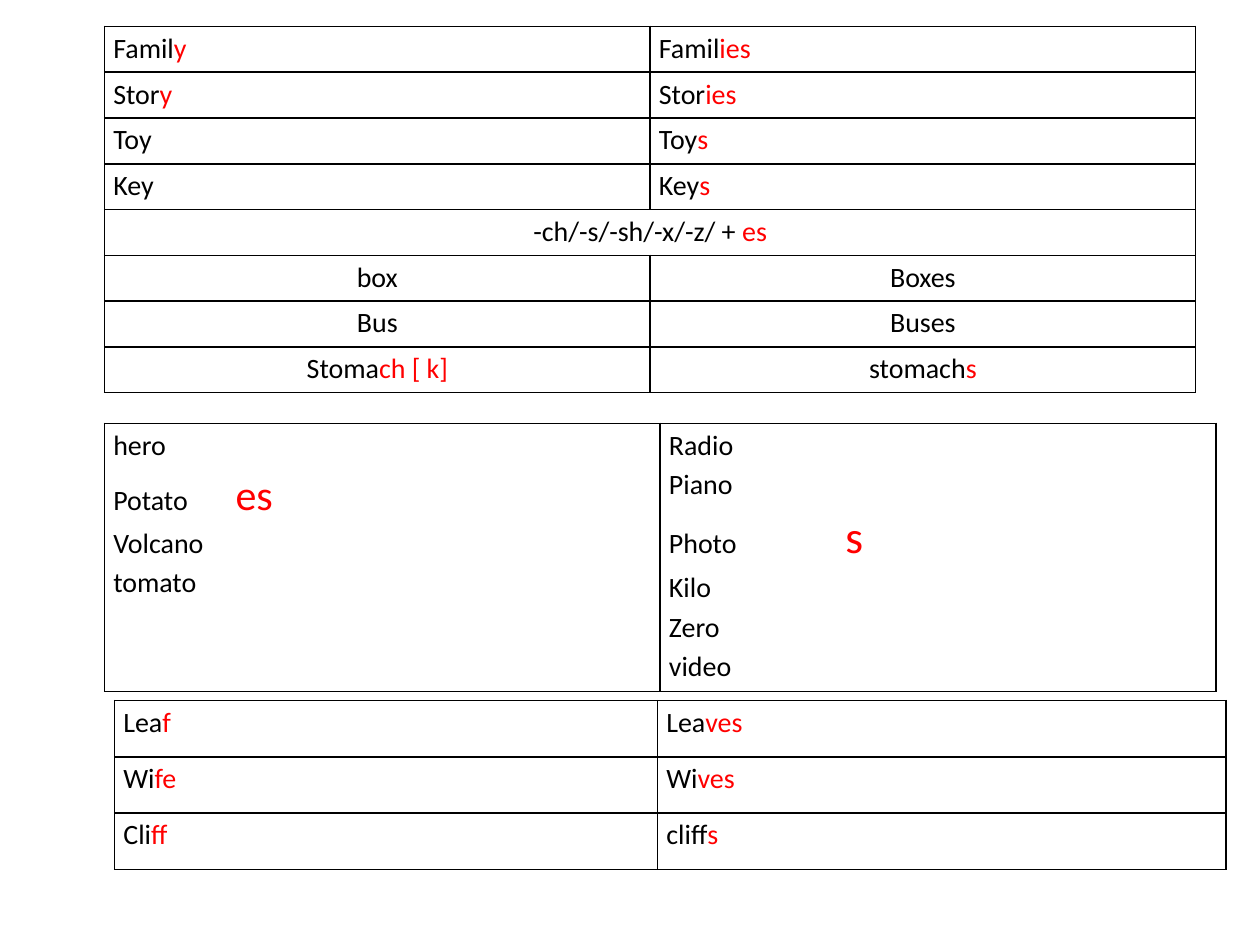
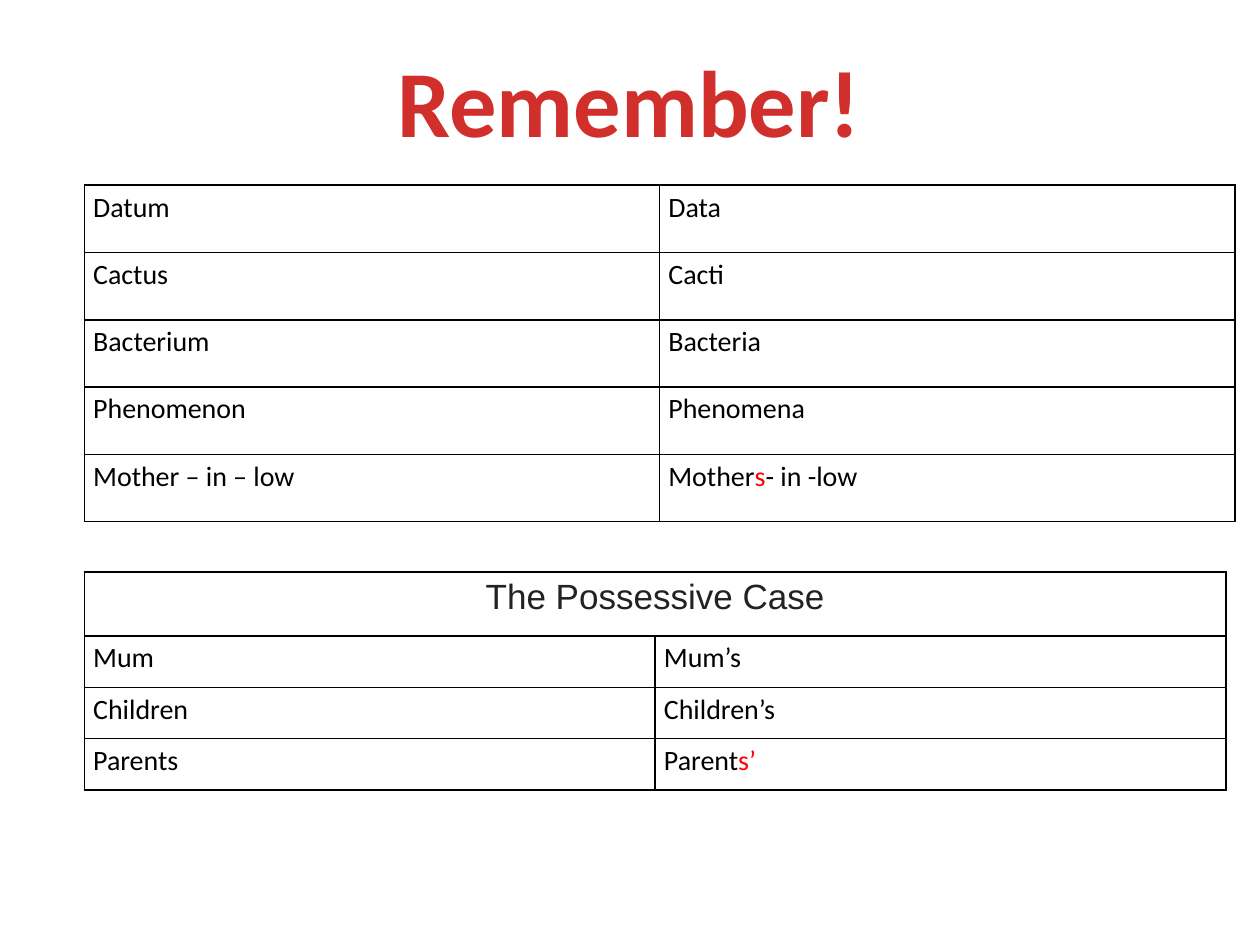
from dataclasses import dataclass
from itertools import accumulate
from typing import NamedTuple

from lxml.etree import SubElement
from pptx import Presentation
from pptx.dml.color import RGBColor
from pptx.enum.text import PP_ALIGN
from pptx.oxml.ns import qn
from pptx.slide import Slide
from pptx.table import _Cell
from pptx.text.text import _Paragraph
from pptx.util import Inches, Pt

SLIDE_WIDTH, SLIDE_HEIGHT = Inches(10), Inches(7.5)
COLUMN, ROW = SLIDE_WIDTH / 100, SLIDE_HEIGHT / 75
ACCENT_MARK = "*"


class TextStyle(NamedTuple):
    font: str
    size: int
    color: str
    bold: bool = False


@dataclass(frozen=True)
class Theme:
    body: TextStyle = TextStyle("Calibri", 16, "000000")
    heading: TextStyle = TextStyle("Arial", 20, "222222")
    title: TextStyle = TextStyle("Calibri", 54, "D02F2C", True)
    accent: str = "FF0000"
    border: str = "000000"
    border_width: int = Pt(1)
    line_spacing: float = 1.15
    side_margin: int = Inches(0.07)


THEME = Theme()


class Box(NamedTuple):
    """Left, top, width and height in grid columns and rows."""
    left: float
    top: float
    width: float
    height: float

    def lengths(self) -> tuple[int, ...]:
        units = (COLUMN, ROW, COLUMN, ROW)
        return tuple(round(share * unit) for share, unit in zip(self, units))


class Line(NamedTuple):
    """Text whose starred parts are accented; tab is a stop in grid columns."""
    text: str
    accent_size: int = THEME.body.size
    tab: float = 0


@dataclass(frozen=True)
class WordRow:
    """A row of cells, each a tuple of lines; a single cell spans the table."""
    cells: tuple[tuple[Line, ...], ...]
    centred: bool = False
    style: TextStyle = THEME.body


@dataclass(frozen=True)
class WordTable:
    box: Box
    rows: tuple[WordRow, ...]
    column_weights: tuple[int, ...] = (1, 1)
    row_weights: tuple[int, ...] = ()


def words(*texts: str, centred: bool = False, style: TextStyle = THEME.body) -> WordRow:
    return WordRow(tuple((Line(text),) for text in texts), centred, style)


PLURAL_TABLES = (
    WordTable(Box(8.3, 2.1, 86.6, 29.1), (
        words("Famil*y*", "Famil*ies*"),
        words("Stor*y*", "Stor*ies*"),
        words("Toy", "Toy*s*"),
        words("Key", "Key*s*"),
        words("-ch/-s/-sh/-x/-z/ + *es*", centred=True),
        words("box", "Boxes", centred=True),
        words("Bus", "Buses", centred=True),
        words("Stoma*ch [ k]*", "stomach*s*", centred=True),
    )),
    WordTable(Box(8.3, 33.6, 88.2, 21.3), (
        WordRow((
            (Line("hero"), Line("Potato\t*es*", 24, 9.7),
             Line("Volcano"), Line("tomato")),
            (Line("Radio"), Line("Piano"), Line("Photo\t*s*", 26, 14),
             Line("Kilo"), Line("Zero"), Line("video")),
        )),
    )),
    WordTable(Box(9.1, 55.6, 88.2, 13.4), (
        words("Lea*f*", "Lea*ves*"),
        words("Wi*fe*", "Wi*ves*"),
        words("Cli*ff*", "cliff*s*"),
    ), column_weights=(43, 45)),
)

EXCEPTION_TABLES = (
    WordTable(Box(6.7, 14.7, 91.3, 26.7), (
        words("Datum", "Data"),
        words("Cactus", "Cacti"),
        words("Bacterium", "Bacteria"),
        words("Phenomenon", "Phenomena"),
        words("Mother – in – low", "Mother*s*- in -low"),
    )),
    WordTable(Box(6.7, 45.4, 90.6, 17.3), (
        words("The Possessive Case", centred=True, style=THEME.heading),
        words("Mum", "Mum’s"),
        words("Children", "Children’s"),
        words("Parents", "Parent*s’*"),
    ), row_weights=(5, 4, 4, 4)),
)


def split_length(total: int, weights: tuple[int, ...]) -> list[int]:
    """Divide a length by weight so that the parts add up to it."""
    edges = [0] + [round(total * part / sum(weights)) for part in accumulate(weights)]
    return [end - start for start, end in zip(edges, edges[1:])]


def format_font(font, style: TextStyle) -> None:
    font.name = style.font
    font.size = Pt(style.size)
    font.bold = style.bold
    font.color.rgb = RGBColor.from_string(style.color)


def add_tab_stop(paragraph: _Paragraph, columns: float) -> None:
    stops = SubElement(paragraph._p.get_or_add_pPr(), qn("a:tabLst"))
    SubElement(stops, qn("a:tab"), pos=str(round(columns * COLUMN)), algn="l")


def write_line(paragraph: _Paragraph, line: Line, row: WordRow) -> None:
    paragraph.line_spacing = THEME.line_spacing
    paragraph.alignment = PP_ALIGN.CENTER if row.centred else PP_ALIGN.LEFT
    if line.tab:
        add_tab_stop(paragraph, line.tab)
    accent = row.style._replace(color=THEME.accent, size=line.accent_size)
    for index, part in enumerate(line.text.split(ACCENT_MARK)):
        if part:
            run = paragraph.add_run()
            run.text = part
            format_font(run.font, accent if index % 2 else row.style)


def format_cell(cell: _Cell) -> None:
    cell.margin_left = cell.margin_right = THEME.side_margin
    cell.margin_top = cell.margin_bottom = 0
    properties = cell._tc.get_or_add_tcPr()
    for side in ("a:lnL", "a:lnR", "a:lnT", "a:lnB"):
        border = SubElement(properties, qn(side), w=str(THEME.border_width))
        fill = SubElement(border, qn("a:solidFill"))
        SubElement(fill, qn("a:srgbClr"), val=THEME.border)
    cell.fill.background()


def write_row(cells: list[_Cell], row: WordRow) -> None:
    for cell in cells:
        format_cell(cell)
    if len(row.cells) == 1:
        cells[0].merge(cells[-1])
    for cell, lines in zip(cells, row.cells):
        text_frame = cell.text_frame
        for index, line in enumerate(lines):
            paragraph = text_frame.add_paragraph() if index else text_frame.paragraphs[0]
            write_line(paragraph, line, row)


def draw_table(slide: Slide, content: WordTable) -> None:
    left, top, width, height = content.box.lengths()
    row_weights = content.row_weights or (1,) * len(content.rows)
    table = slide.shapes.add_table(
        len(content.rows), len(content.column_weights), left, top, width, height
    ).table
    table.first_row = table.horz_banding = False
    for column, length in zip(table.columns, split_length(width, content.column_weights)):
        column.width = length
    for table_row, length, row in zip(
        table.rows, split_length(height, row_weights), content.rows
    ):
        table_row.height = length
        write_row(list(table_row.cells), row)


def draw_title(slide: Slide, text: str, box: Box) -> None:
    text_frame = slide.shapes.add_textbox(*box.lengths()).text_frame
    text_frame.word_wrap = True
    text_frame.text = text
    paragraph = text_frame.paragraphs[0]
    paragraph.alignment = PP_ALIGN.CENTER
    format_font(paragraph.runs[0].font, THEME.title)


def main() -> None:
    presentation = Presentation()
    presentation.slide_width, presentation.slide_height = SLIDE_WIDTH, SLIDE_HEIGHT
    blank_layout = presentation.slide_layouts[6]
    plurals, exceptions = (presentation.slides.add_slide(blank_layout) for _ in range(2))
    draw_title(exceptions, "Remember!", Box(16.1, 2.9, 67.7, 10.1))
    for slide, tables in ((plurals, PLURAL_TABLES), (exceptions, EXCEPTION_TABLES)):
        for table in tables:
            draw_table(slide, table)
    presentation.save("out.pptx")


if __name__ == "__main__":
    main()
